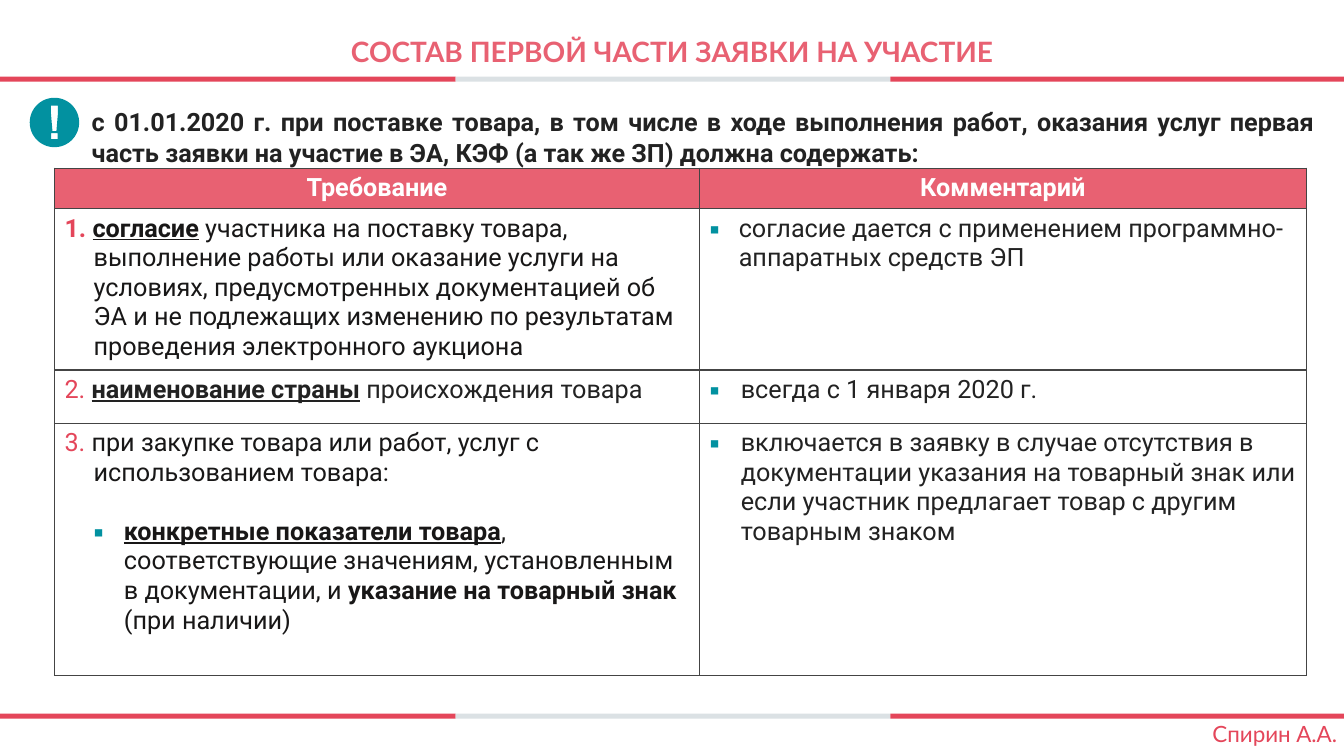
from dataclasses import dataclass
from math import cos, radians, sin

from lxml.etree import SubElement
from pptx import Presentation
from pptx.dml.color import RGBColor
from pptx.enum.shapes import MSO_SHAPE as Preset
from pptx.enum.text import MSO_AUTO_SIZE as AutoSize, PP_ALIGN as Align
from pptx.oxml.ns import qn
from pptx.util import Emu, Inches, Pt

WIDTH, HEIGHT = Inches(13.33), Inches(7.5)
COLUMNS, ROWS = 40, 30
RED, ROSE, GREY, TEAL = "E4465A", "E86172", "DBE1E4", "0291A0"
INK, DARK, WHITE, BORDER = "181717", "222222", "FFFFFF", "444444"


@dataclass
class Span:
    text: str
    color: str = INK
    bold: bool = False
    underline: bool = False
    font: str = "Roboto"
    size: int = 18


@dataclass
class Para:
    spans: list[Span]
    align: Align | None = None
    indent: float = 0  # grid columns
    hanging: float = 0  # grid columns
    bullet: bool = False
    before: int = 0


@dataclass
class Label:
    left: float
    top: float
    width: float
    height: float
    para: Para
    wrap: bool = True


def across(columns: float) -> Emu:
    return Emu(round(WIDTH * columns / COLUMNS))


def down(rows: float) -> Emu:
    return Emu(round(HEIGHT * rows / ROWS))


def rgb(color: str) -> RGBColor:
    return RGBColor.from_string(color)


def paint(shape, color: str) -> None:
    shape.shadow.inherit = False
    shape.fill.solid()
    shape.fill.fore_color.rgb = rgb(color)
    shape.line.fill.background()


def write(frame, paras: list[Para]) -> None:
    for index, item in enumerate(paras):
        para = frame.add_paragraph() if index else frame.paragraphs[0]
        para.alignment = item.align
        if item.before:
            para.space_before = Pt(item.before)
        props = para._p.get_or_add_pPr()
        if item.indent:
            props.set("marL", str(across(item.indent)))
            props.set("indent", str(-across(item.hanging)))
        if item.bullet:
            tint = SubElement(props, qn("a:buClr"))
            SubElement(tint, qn("a:srgbClr")).set("val", TEAL)
            SubElement(props, qn("a:buFont")).set("typeface", "Roboto")
            SubElement(props, qn("a:buChar")).set("char", "▪")
        for part in item.spans:
            span = para.add_run()
            span.text = part.text
            font = span.font
            font.name, font.size = part.font, Pt(part.size)
            font.bold, font.underline = part.bold, part.underline
            font.color.rgb = rgb(part.color)


def draw_bars(page) -> None:
    edges = [0, 13.56, 26.5, COLUMNS]
    for top in (3.04, 28.32):
        for left, right, color in zip(edges, edges[1:], (RED, GREY, RED)):
            bar = page.shapes.add_shape(
                Preset.RECTANGLE, across(left), down(top), across(right - left), down(0.2))
            paint(bar, color)


def draw_label(page, label: Label) -> None:
    box = page.shapes.add_textbox(
        across(label.left), down(label.top), across(label.width), down(label.height))
    box.text_frame.word_wrap = label.wrap
    box.text_frame.auto_size = AutoSize.SHAPE_TO_FIT_TEXT
    write(box.text_frame, [label.para])


def draw_alert(page) -> None:
    """A disc with an exclamation mark cut out; outlines are shares of the radius."""
    disc = [(cos(radians(a)), sin(radians(a))) for a in range(0, 360, 5)]
    stem = [(-.14, -.68), (-.14, -.35), (-.08, .35), (.08, .35), (.14, -.35), (.14, -.68)]
    dot = [(-.13, .43), (-.13, .67), (.13, .67), (.13, .43)]
    center_x, center_y, radius = across(1.62), down(4.86), down(0.98)
    outlines = [[(round(center_x + x * radius), round(center_y + y * radius)) for x, y in outline]
                for outline in (disc, stem, dot)]
    builder = page.shapes.build_freeform(*outlines[0][0])
    for index, outline in enumerate(outlines):
        if index:
            builder.move_to(*outline[0])
        builder.add_line_segments(outline[1:], close=True)
    paint(builder.convert_to_shape(), TEAL)


def style_cell(cell, fill: str | None) -> None:
    props = cell._tc.get_or_add_tcPr()
    for side in ("lnL", "lnR", "lnT", "lnB"):
        line = SubElement(props, qn(f"a:{side}"))
        line.set("w", str(Pt(1)))
        solid = SubElement(line, qn("a:solidFill"))
        SubElement(solid, qn("a:srgbClr")).set("val", BORDER)
    if fill:
        cell.fill.solid()
        cell.fill.fore_color.rgb = rgb(fill)
    else:
        cell.fill.background()


def draw_table(page, grid: list[list[list[Para]]]) -> None:
    widths, heights = [19.2, 18.06], [1.6, 6.4, 2.12, 10]
    table = page.shapes.add_table(
        len(heights), len(widths), across(1.62), down(6.68),
        across(sum(widths)), down(sum(heights))).table
    table.first_row = table.horz_banding = False
    for column, width in zip(table.columns, widths):
        column.width = across(width)
    for index, (row, height, contents) in enumerate(zip(table.rows, heights, grid)):
        row.height = down(height)
        for cell, paras in zip(row.cells, contents):
            style_cell(cell, None if index else ROSE)
            write(cell.text_frame, paras)


def heading(text: str) -> list[Para]:
    return [Para([Span(text, WHITE, bold=True)], Align.CENTER)]


def numbered(number: str, *spans: Span) -> Para:
    return Para([Span(number, RED, bold=number == "1. "), *spans], indent=0.87, hanging=0.87)


def comment(text: str, indent: float = 0.93) -> list[Para]:
    return [Para([Span(text, DARK)], indent=indent, hanging=indent, bullet=True)]


REQUIREMENTS = [
    [heading("Требование"), heading("Комментарий")],
    [[numbered("1. ", Span("согласие", bold=True, underline=True),
               Span(" участника на поставку товара, выполнение работы или оказание услуги на "
                    "условиях, предусмотренных документацией об ЭА и не подлежащих изменению "
                    "по результатам проведения электронного аукциона"))],
     comment("согласие дается с применением программно-аппаратных средств ЭП", 0.87)],
    [[numbered("2. ", Span("наименование страны", DARK, bold=True, underline=True),
               Span(" происхождения товара", DARK))],
     comment("всегда с 1 января 2020 г.")],
    [[numbered("3. ", Span("при закупке товара или работ, услуг с использованием товара:")),
      Para([Span("конкретные показатели товара", bold=True, underline=True),
            Span(", соответствующие значениям, установленным в документации, и "),
            Span("указание на товарный знак ", bold=True), Span("(при наличии)")],
           indent=1.77, hanging=0.9, bullet=True, before=21)],
     comment("включается в заявку в случае отсутствия в документации указания на товарный знак "
             "или если участник предлагает товар с другим товарным знаком")],
]
INTRO = Label(2.43, 4.04, 37, 2.84, Para([Span(
    "с 01.01.2020 г. при поставке товара, в том числе в ходе выполнения работ, оказания услуг "
    "первая часть заявки на участие в ЭА, КЭФ (а так же ЗП) должна содержать:",
    DARK, bold=True)], Align.JUSTIFY))
TITLE = Label(9.18, 1.16, 21.66, 1.76, Para([Span(
    "СОСТАВ ПЕРВОЙ ЧАСТИ ЗАЯВКИ НА УЧАСТИЕ", ROSE, bold=True, font="Lato", size=20)], Align.CENTER))
AUTHOR = Label(35.79, 28.4, 4.32, 1.48, Para([Span(
    "Спирин А.А.", RED, font="Lato", size=16)]), wrap=False)


def main() -> None:
    deck = Presentation()
    deck.slide_width, deck.slide_height = WIDTH, HEIGHT
    page = deck.slides.add_slide(deck.slide_layouts[6])
    draw_bars(page)
    draw_label(page, INTRO)
    draw_table(page, REQUIREMENTS)
    draw_alert(page)
    draw_label(page, TITLE)
    draw_label(page, AUTHOR)
    deck.save("out.pptx")


if __name__ == "__main__":
    main()
